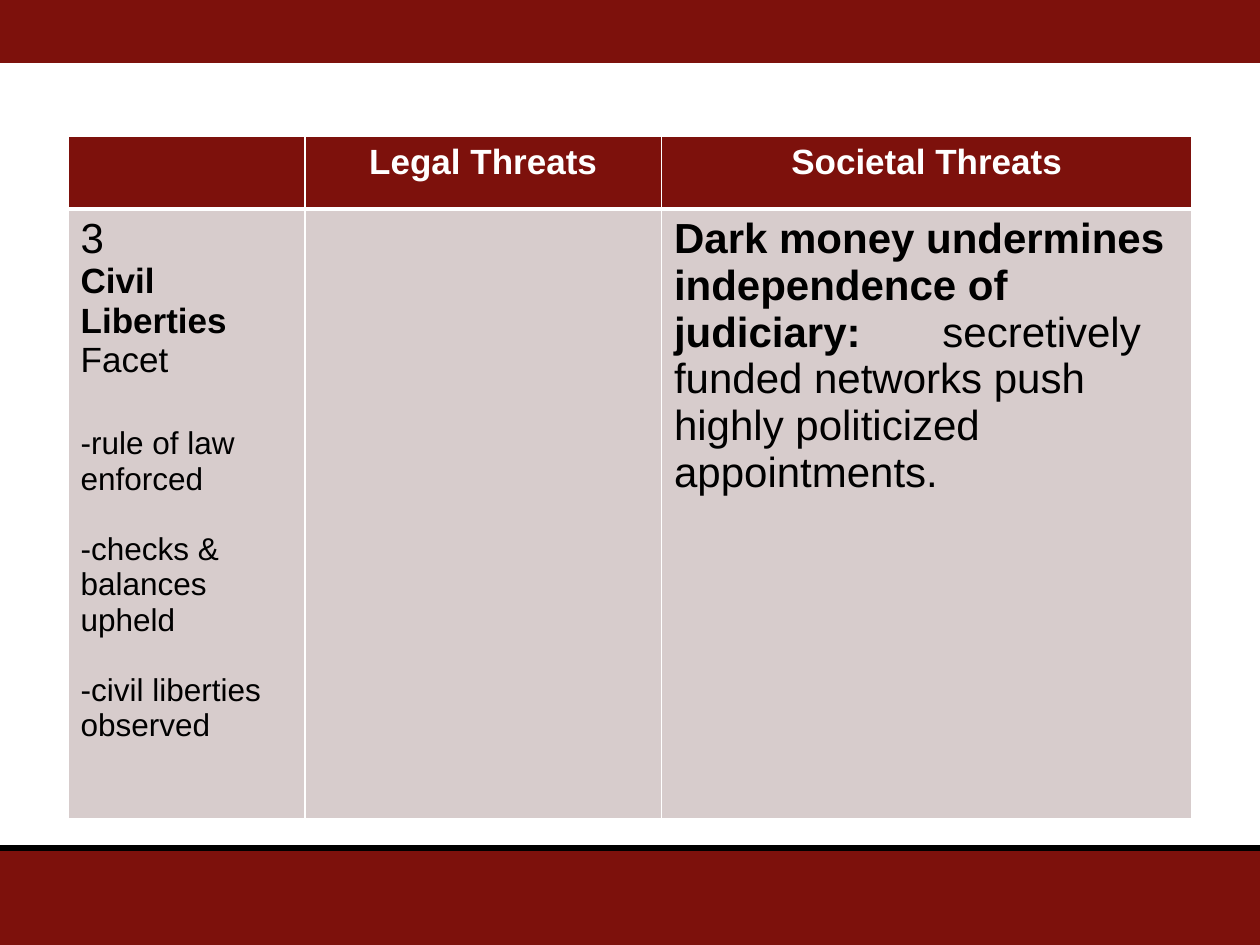
from dataclasses import dataclass

from lxml import etree
from pptx import Presentation
from pptx.dml.color import RGBColor
from pptx.enum.shapes import MSO_CONNECTOR, MSO_SHAPE
from pptx.enum.text import PP_ALIGN
from pptx.oxml.ns import qn
from pptx.util import Inches, Pt

RECT = MSO_SHAPE.RECTANGLE
LINE = MSO_CONNECTOR.STRAIGHT
LEFT, MID = PP_ALIGN.LEFT, PP_ALIGN.CENTER


@dataclass(frozen=True)
class Theme:
    """Colours, font and type sizes of the deck."""
    red: str = "7D110C"
    grey: str = "D7CCCC"
    white: str = "FFFFFF"
    black: str = "000000"
    font: str = "Arial"
    big: int = 24
    head: int = 20
    note: int = 18


T = Theme()
COLS = (1.88, 2.83, 4.21)
ROWS = (0.58, 4.84)
HEADS = ("", "Legal Threats", "Societal Threats")
NOTES = ("-rule of law enforced", "-checks & balances upheld", "-civil liberties observed")
GAPS = (26.8, 20.1, 20.1)


def rgb(code):
    """Turn a hex code into a colour."""
    return RGBColor.from_string(code)


def add_bar(slide, box):
    """Place a plain red bar in the box."""
    bar = slide.shapes.add_shape(RECT, *map(Inches, box))
    bar.shadow.inherit = False
    bar.fill.solid()
    bar.fill.fore_color.rgb = rgb(T.red)
    bar.line.fill.background()


def add_rule(slide, box):
    """Draw a thick black rule along the top of the box."""
    x, y, w, _ = map(Inches, box)
    rule = slide.shapes.add_connector(LINE, x, y, x + w, y)
    rule.line.color.rgb = rgb(T.black)
    rule.line.width = Pt(3.75)
    etree.SubElement(rule._element.spPr, qn("a:effectLst"))


def edge(cell, top, base):
    """Give a cell white borders with the top and base widths in points."""
    props = cell._tc.get_or_add_tcPr()
    for side, width in (("L", 1), ("R", 1), ("T", top), ("B", base)):
        line = etree.SubElement(props, qn(f"a:ln{side}"), w=str(Pt(width)))
        fill = etree.SubElement(line, qn("a:solidFill"))
        etree.SubElement(fill, qn("a:srgbClr"), val=T.white)


def write(para, runs, color=T.black, align=LEFT, gap=0, tab=None):
    """Fill a paragraph with runs of text, size and weight."""
    para.alignment = align
    if gap:
        para.space_before = Pt(gap)
    if tab:
        stops = etree.SubElement(para._p.get_or_add_pPr(), qn("a:tabLst"))
        etree.SubElement(stops, qn("a:tab"), pos=str(Inches(tab)), algn="l")
    for text, size, bold in runs:
        run = para.add_run()
        run.text = text
        form = {"name": T.font, "size": Pt(size), "bold": bold, "italic": False}
        for key, value in form.items():
            setattr(run.font, key, value)
        run.font.color.rgb = rgb(color)


def fill_facet(frame):
    """Write the facet name and its notes."""
    write(frame.paragraphs[0], [("3", T.big, False)])
    write(frame.add_paragraph(),
          [("Civil Liberties", T.head, True), (" Facet", T.head, False)])
    for note, gap in zip(NOTES, GAPS):
        write(frame.add_paragraph(), [(note, T.note, False)], gap=gap)


def add_grid(slide, box):
    """Place the table of threats in the box."""
    grid = slide.shapes.add_table(len(ROWS), len(COLS), *map(Inches, box)).table
    for col, width in zip(grid.columns, COLS):
        col.width = Inches(width)
    for row, height in zip(grid.rows, ROWS):
        row.height = Inches(height)
    looks = ((T.red, 1, 3), (T.grey, 3, 1))
    for row, (color, top, base) in zip(grid.rows, looks):
        for cell in row.cells:
            edge(cell, top, base)
            cell.fill.solid()
            cell.fill.fore_color.rgb = rgb(color)
    for col, head in enumerate(HEADS):
        if head:
            para = grid.cell(0, col).text_frame.paragraphs[0]
            write(para, [(head, T.head, True)], T.white, MID)
    fill_facet(grid.cell(1, 0).text_frame)
    write(grid.cell(1, 2).text_frame.paragraphs[0], [
        ("Dark money undermines independence of judiciary:\t", T.big, True),
        ("secretively funded networks push highly politicized appointments.",
         T.big, False)], tab=2.13)


def main():
    """Build and save the slide."""
    deck = Presentation()
    deck.slide_width, deck.slide_height = Inches(10), Inches(7.5)
    slide = deck.slides.add_slide(deck.slide_layouts[6])
    add_bar(slide, (0, 6.75, 10, 0.75))
    add_rule(slide, (0, 6.73, 10, 0))
    add_bar(slide, (0, 0, 10, 0.5))
    add_grid(slide, (0.54, 1.08, sum(COLS), sum(ROWS)))
    deck.save("out.pptx")


if __name__ == "__main__":
    main()
